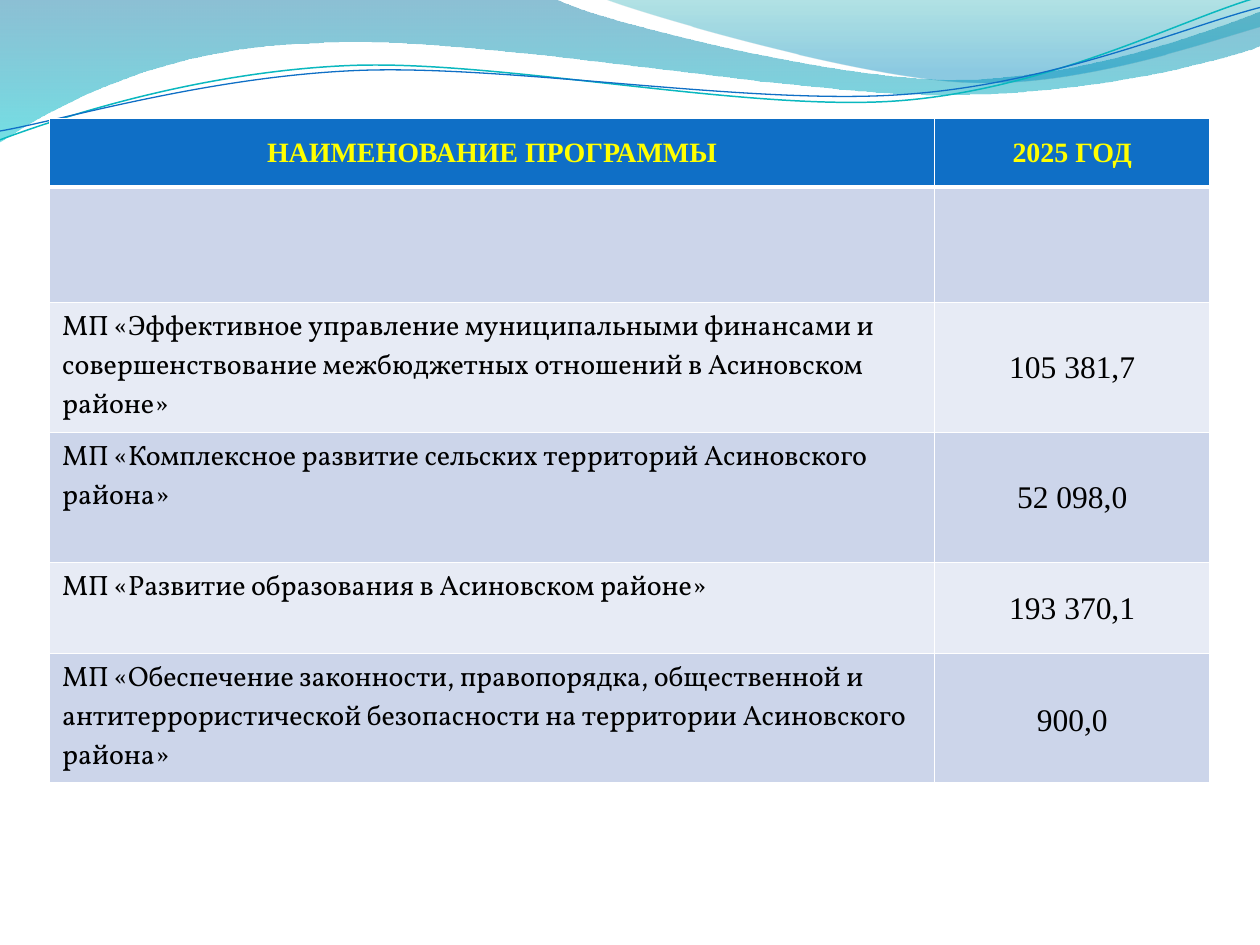
import dataclasses
import math
import typing

import lxml.etree
import pptx
import pptx.dml.color
import pptx.enum.text
import pptx.oxml
import pptx.oxml.ns
import pptx.util

Cm, Pt = pptx.util.Cm, pptx.util.Pt
ALIGN, ANCHOR = pptx.enum.text.PP_ALIGN, pptx.enum.text.MSO_ANCHOR
qn = pptx.oxml.ns.qn

UNIT = 2.54  # wave points lie on a 10 by 7.5 grid, in cm per grid unit
TILT = -2.7  # degrees, for the thin waves
WHITE, BLUE, YELLOW, BLACK = "FFFFFF", "0F6FC6", "FFFF00", "000000"
BANDS = ("CCD5EA", "E7EBF5")

Point = tuple[float, float]
Stop = tuple[int, str, int]  # position %, colour, opacity %


@dataclasses.dataclass
class Wave:
    start: Point
    segments: list[tuple[float, ...]]  # 2 numbers: straight line, 6: cubic curve
    stops: typing.Optional[list[Stop]] = None
    line: typing.Optional[tuple[str, float]] = None
    pivot: typing.Optional[Point] = None  # centre of a tilted wave


@dataclasses.dataclass
class CellStyle:
    frame: dict
    paragraph: dict
    font: dict
    color: str = BLACK


WAVES = [
    Wave((0, 0), [(4.4, -0.01), (4.76, 0.17, 6.64, 0.63, 7.58, 0.63),
                  (8.53, 0.63, 9.58, 0.26, 10, 0.09), (10.01, 0.36),
                  (9.83, 0.44, 8.7, 0.76, 7.46, 0.75),
                  (6.22, 0.75, 3.82, 0.28, 2.57, 0.34),
                  (1.29, 0.36, 0.46, 0.83, -0.01, 1.13), (0, 0)],
         stops=[(0, "0074A1", 45), (100, "00C6CF", 55)]),
    Wave((4.79, -0.01), [(5.09, 0.11, 6.82, 0.62, 7.69, 0.65),
                         (8.56, 0.69, 9.61, 0.32, 10, 0.21), (10, 0), (4.79, -0.01)],
         stops=[(0, "00A1A9", 30), (80, "008BBF", 45)]),
    Wave((0, 1.11), [(0.48, 0.93, 1.58, 0.57, 2.77, 0.52),
                     (3.95, 0.47, 5.93, 0.89, 7.13, 0.8),
                     (8.33, 0.71, 9.38, 0.15, 9.98, -0.02)],
         line=("0AB8BF", 0.85), pivot=(4.99, 0.58)),
    Wave((0, 1.04), [(0.47, 0.96, 1.64, 0.61, 2.83, 0.56),
                     (4.03, 0.51, 5.97, 0.84, 7.17, 0.75),
                     (8.36, 0.67, 9.41, 0.21, 10, 0.06)],
         line=(BLUE, 0.75), pivot=(5, 0.59)),
]

COLUMNS = (17.84, 5.55)
ROWS = [
    (1.38, "НАИМЕНОВАНИЕ ПРОГРАММЫ", "2025 ГОД"),
    (2.33, "", ""),
    (2.62, "МП «Эффективное управление муниципальными финансами и совершенствование "
           "межбюджетных отношений в Асиновском районе»", "105 381,7"),
    (2.62, "МП «Комплексное развитие сельских территорий Асиновского района»", "52 098,0"),
    (1.83, "МП «Развитие образования в Асиновском районе»", "193 370,1"),
    (2.62, "МП «Обеспечение законности, правопорядка, общественной и "
           "антитеррористической безопасности на территории Асиновского района»", "900,0"),
]

TIGHT = dict(vertical_anchor=ANCHOR.MIDDLE, margin_left=Cm(0.03), margin_top=Cm(0.03),
             margin_right=Cm(0.03), margin_bottom=0)
HEADER = CellStyle(TIGHT, dict(alignment=ALIGN.CENTER),
                   dict(name="Times New Roman", size=Pt(16), bold=True), YELLOW)
PROGRAM = CellStyle({}, dict(alignment=ALIGN.LEFT),
                    dict(name="Vollkorn", size=Pt(16), bold=False))
AMOUNT = CellStyle(TIGHT, dict(alignment=ALIGN.CENTER),
                   dict(name="Times New Roman", size=Pt(18), bold=False))


def rgb(color: str) -> pptx.dml.color.RGBColor:
    return pptx.dml.color.RGBColor.from_string(color)


def apply(target: typing.Any, values: dict) -> None:
    for name, value in values.items():
        setattr(target, name, value)


def level(point: Point, pivot: Point) -> Point:
    """Turn a point back by the tilt, about the pivot."""
    a = math.radians(-TILT)
    dx, dy = point[0] - pivot[0], point[1] - pivot[1]
    return (pivot[0] + dx * math.cos(a) - dy * math.sin(a),
            pivot[1] + dx * math.sin(a) + dy * math.cos(a))


def bend(sp: typing.Any, segments: list[tuple[float, ...]]) -> None:
    """Join each curve's three straight steps into one cubic curve."""
    steps = iter(list(sp._element.iter(qn("a:lnTo"))))
    for segment in segments:
        first = next(steps)
        if len(segment) == 6:
            first.tag_name = None
            cubic = lxml.etree.Element(qn("a:cubicBezTo"))
            first.addprevious(cubic)
            for step in (first, next(steps), next(steps)):
                cubic.append(step[0])
                step.getparent().remove(step)


def set_gradient(sp: typing.Any, stops: list[Stop]) -> None:
    """Vertical gradient with an opacity for each stop."""
    sp.fill.gradient()
    grad = sp._element.spPr.find(qn("a:gradFill"))
    for child in list(grad):
        grad.remove(child)
    gs_list = lxml.etree.SubElement(grad, qn("a:gsLst"))
    for position, color, opacity in stops:
        gs = lxml.etree.SubElement(gs_list, qn("a:gs"), pos=str(position * 1000))
        clr = lxml.etree.SubElement(gs, qn("a:srgbClr"), val=color)
        lxml.etree.SubElement(clr, qn("a:alpha"), val=str(opacity * 1000))
    lxml.etree.SubElement(grad, qn("a:lin"), ang="5400000", scaled="0")


def draw_wave(s: typing.Any, wave: Wave) -> None:
    points = [wave.start]
    for segment in wave.segments:
        points += zip(segment[::2], segment[1::2])
    if wave.pivot:
        points = [level(point, wave.pivot) for point in points]
    points = [(Cm(x * UNIT), Cm(y * UNIT)) for x, y in points]
    builder = s.shapes.build_freeform(*points[0])
    builder.add_line_segments(points[1:], close=wave.stops is not None)
    sp = builder.convert_to_shape()
    bend(sp, wave.segments)
    sp.shadow.inherit = False
    if wave.pivot:
        sp.rotation = TILT
    if wave.stops:
        set_gradient(sp, wave.stops)
        sp.line.fill.background()
    else:
        sp.fill.background()
        sp.line.color.rgb = rgb(wave.line[0])
        sp.line.width = Pt(wave.line[1])


def set_borders(cell: typing.Any, widths: dict[str, float]) -> None:
    tc_pr = cell._tc.get_or_add_tcPr()
    for i, (side, width) in enumerate(widths.items()):
        ln = lxml.etree.Element(qn(f"a:{side}"), w=str(Pt(width)))
        fill = lxml.etree.SubElement(ln, qn("a:solidFill"))
        lxml.etree.SubElement(fill, qn("a:srgbClr"), val=WHITE)
        tc_pr.insert(i, ln)


def fill_cell(cell: typing.Any, text: str, fill: str, style: CellStyle) -> None:
    cell.fill.solid()
    cell.fill.fore_color.rgb = rgb(fill)
    if not text:
        return
    apply(cell, style.frame)
    p = cell.text_frame.paragraphs[0]
    apply(p, style.paragraph)
    r = p.add_run()
    r.text = text
    apply(r.font, style.font)
    r.font.color.rgb = rgb(style.color)


def draw_table(s: typing.Any) -> None:
    table = s.shapes.add_table(len(ROWS), len(COLUMNS), Cm(1), Cm(2.39), Cm(sum(COLUMNS)),
                               Cm(sum(row[0] for row in ROWS))).table
    for column, width in zip(table.columns, COLUMNS):
        column.width = Cm(width)
    for i, (height, *texts) in enumerate(ROWS):
        table.rows[i].height = Cm(height)
        for j, text in enumerate(texts):
            style = HEADER if i == 0 else (PROGRAM, AMOUNT)[j]
            cell = table.cell(i, j)
            fill_cell(cell, text, BLUE if i == 0 else BANDS[(i - 1) % 2], style)
            set_borders(cell, dict(lnL=1, lnR=1, lnT=3 if i == 1 else 1,
                                   lnB=3 if i == 0 else 1))
    # The last amount has wider margins and looser lines
    last = table.cell(len(ROWS) - 1, 1)
    apply(last, dict(margin_left=Cm(0.1), margin_right=Cm(0.1),
                     margin_top=Cm(0.18), margin_bottom=Cm(0.18)))
    last.text_frame.paragraphs[0].line_spacing = 1.15


def main() -> None:
    prs = pptx.Presentation()
    prs.slide_width, prs.slide_height = Cm(25.4), Cm(19.05)
    s = prs.slides.add_slide(prs.slide_layouts[6])
    # Waves along the top edge
    for wave in WAVES:
        draw_wave(s, wave)
    # Programme amounts
    draw_table(s)
    prs.save("out.pptx")


if __name__ == "__main__":
    main()
